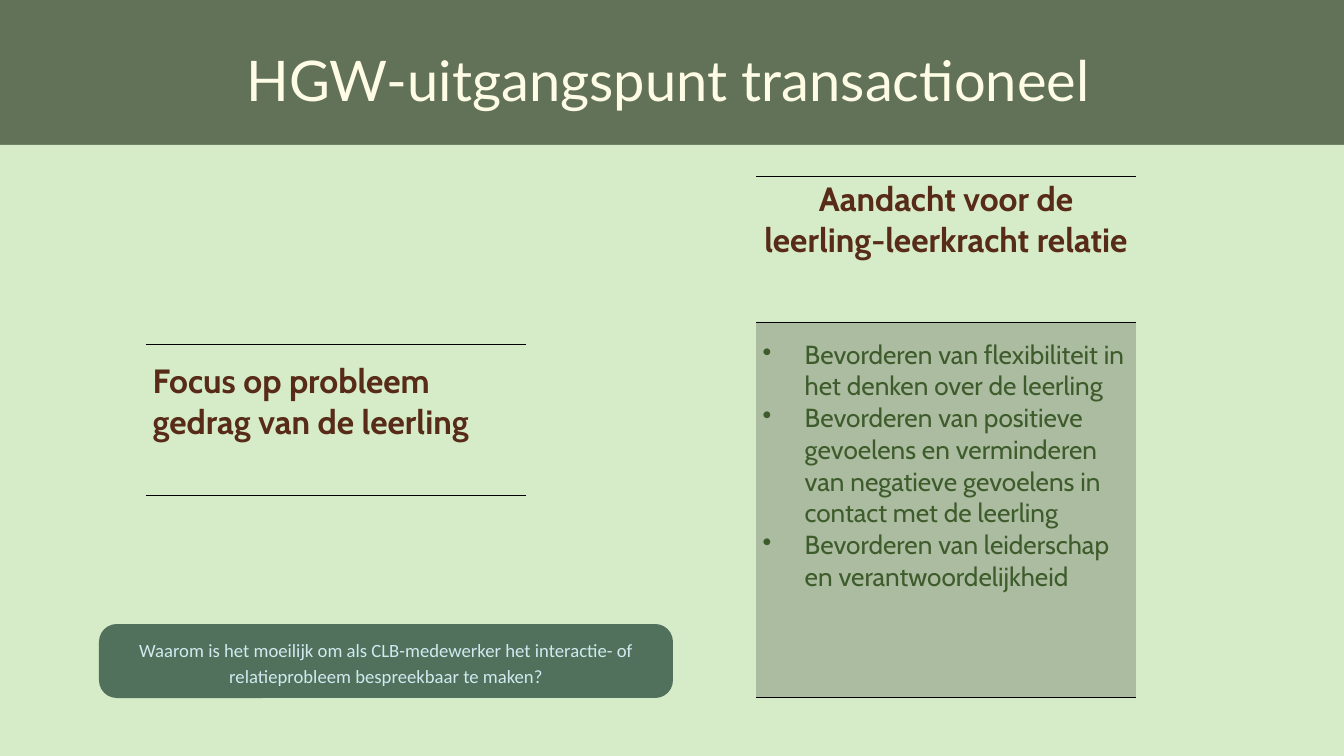
from lxml import etree
from pptx import Presentation
from pptx.dml.color import RGBColor
from pptx.enum.shapes import MSO_SHAPE
from pptx.enum.text import MSO_ANCHOR, PP_ALIGN
from pptx.oxml.ns import qn
from pptx.util import Emu, Pt

RECTANGLE = MSO_SHAPE.RECTANGLE
ROUNDED = MSO_SHAPE.ROUNDED_RECTANGLE
MIDDLE = MSO_ANCHOR.MIDDLE
LEFT, CENTER = PP_ALIGN.LEFT, PP_ALIGN.CENTER

OLIVE = RGBColor(0x62, 0x72, 0x58)
MINT = RGBColor(0xD6, 0xEC, 0xC8)
CREAM = RGBColor(0xFF, 0xFC, 0xE5)
BROWN = RGBColor(0x57, 0x2B, 0x18)
LEAF = RGBColor(0x3E, 0x5B, 0x2C)
PINE = RGBColor(0x51, 0x71, 0x5C)
ICE = RGBColor(0xD0, 0xEA, 0xF0)
BLACK = RGBColor(0, 0, 0)

WIDTH, HEIGHT = 1344, 756
BANNER_HEIGHT = 145
COLUMN_WIDTH = 380
TEXT_OFFSET = 17
HANGING = 42


def px(length):
    return Emu(round(length * 914400 / 67.2))


class SlideBuilder:
    """Holds the slide and draws its elements in one style."""

    def __init__(self, slide):
        self.slide = slide

    def background(self, color):
        fill = self.slide.background.fill
        fill.solid()
        fill.fore_color.rgb = color

    def add_text(self, paragraph, text, font, size, color, bold=False, align=LEFT):
        paragraph.alignment = align
        run = paragraph.add_run()
        run.text = text
        run.font.name = font
        run.font.size = Pt(size)
        run.font.bold = bold
        run.font.color.rgb = color

    def panel(self, kind, left, top, width, height, color):
        panel = self.slide.shapes.add_shape(kind, px(left), px(top), px(width), px(height))
        panel.shadow.inherit = False
        panel.fill.solid()
        panel.fill.fore_color.rgb = color
        panel.line.fill.background()
        return panel

    def title(self, text, left, top, width, height):
        box = self.slide.shapes.add_textbox(px(left), px(top), px(width), px(height))
        box.text_frame.word_wrap = True
        self.add_text(box.text_frame.paragraphs[0], text, "Lato", 60, CREAM, align=CENTER)

    def question(self, text, left, top, width, height):
        panel = self.panel(ROUNDED, left, top, width, height, PINE)
        panel.adjustments[0] = 0.24
        frame = panel.text_frame
        frame.word_wrap = True
        frame.vertical_anchor = MIDDLE
        frame.margin_left = frame.margin_right = px(4)
        frame.margin_top = frame.margin_bottom = px(4)
        frame.paragraphs[0].line_spacing = Pt(28)
        self.add_text(frame.paragraphs[0], text, "Calibri", 20, ICE, align=CENTER)

    def table(self, left, top, row_heights):
        table = self.slide.shapes.add_table(
            len(row_heights), 1, px(left), px(top), px(COLUMN_WIDTH), px(sum(row_heights))
        ).table
        table.first_row = table.horz_banding = False
        for row, height in zip(table.rows, row_heights):
            row.height = px(height)
        for cell in table.iter_cells():
            self.rule(cell)
            cell.fill.background()
        return table

    def rule(self, cell):
        properties = cell._tc.get_or_add_tcPr()
        for side in "LR":
            line = etree.SubElement(properties, qn(f"a:ln{side}"), w="0")
            etree.SubElement(line, qn("a:noFill"))
        for side in "TB":
            line = etree.SubElement(properties, qn(f"a:ln{side}"), w=str(Pt(1)))
            fill = etree.SubElement(line, qn("a:solidFill"))
            etree.SubElement(fill, qn("a:srgbClr"), val=str(BLACK))

    def heading(self, cell, text, align=LEFT):
        self.add_text(cell.text_frame.paragraphs[0], text, "Cabin", 36, BROWN, True, align)

    def bullets(self, cell, items):
        frame = cell.text_frame
        for index, item in enumerate(items):
            paragraph = frame.add_paragraph() if index else frame.paragraphs[0]
            properties = paragraph._p.get_or_add_pPr()
            properties.set("marL", str(px(HANGING)))
            properties.set("indent", str(-px(HANGING)))
            etree.SubElement(properties, qn("a:buChar"), char="•")
            self.add_text(paragraph, item, "Cabin", 28, LEAF)

    def shade(self, cell, color, percent):
        cell.fill.solid()
        cell.fill.fore_color.rgb = color
        fill = cell._tc.get_or_add_tcPr().find(qn("a:solidFill"))
        etree.SubElement(fill[0], qn("a:alpha"), val=str(percent * 1000))


def main():
    presentation = Presentation()
    presentation.slide_width, presentation.slide_height = px(WIDTH), px(HEIGHT)
    builder = SlideBuilder(presentation.slides.add_slide(presentation.slide_layouts[6]))

    builder.background(OLIVE)
    builder.panel(RECTANGLE, 0, BANNER_HEIGHT, WIDTH, HEIGHT - BANNER_HEIGHT, MINT)
    builder.title("HGW-uitgangspunt transactioneel", 9, 42, 1318, 75)

    focus = builder.table(146, 344, [151]).cell(0, 0)
    focus.margin_top = px(TEXT_OFFSET)
    builder.heading(focus, "Focus op probleem gedrag van de leerling")

    relation = builder.table(756, 176, [146, 375])
    builder.heading(
        relation.cell(0, 0), "Aandacht voor de leerling-leerkracht relatie", CENTER
    )
    goals = relation.cell(1, 0)
    goals.margin_top = px(TEXT_OFFSET)
    builder.shade(goals, BLACK, 20)
    builder.bullets(goals, [
        "Bevorderen van flexibiliteit in het denken over de leerling",
        "Bevorderen van positieve gevoelens en verminderen van negatieve gevoelens "
        "in contact met de leerling",
        "Bevorderen van leiderschap en verantwoordelijkheid",
    ])

    builder.question(
        "Waarom is het moeilijk om als CLB-medewerker het interactie- of "
        "relatieprobleem bespreekbaar te maken?",
        99, 624, 574, 74,
    )
    presentation.save("out.pptx")


if __name__ == "__main__":
    main()
